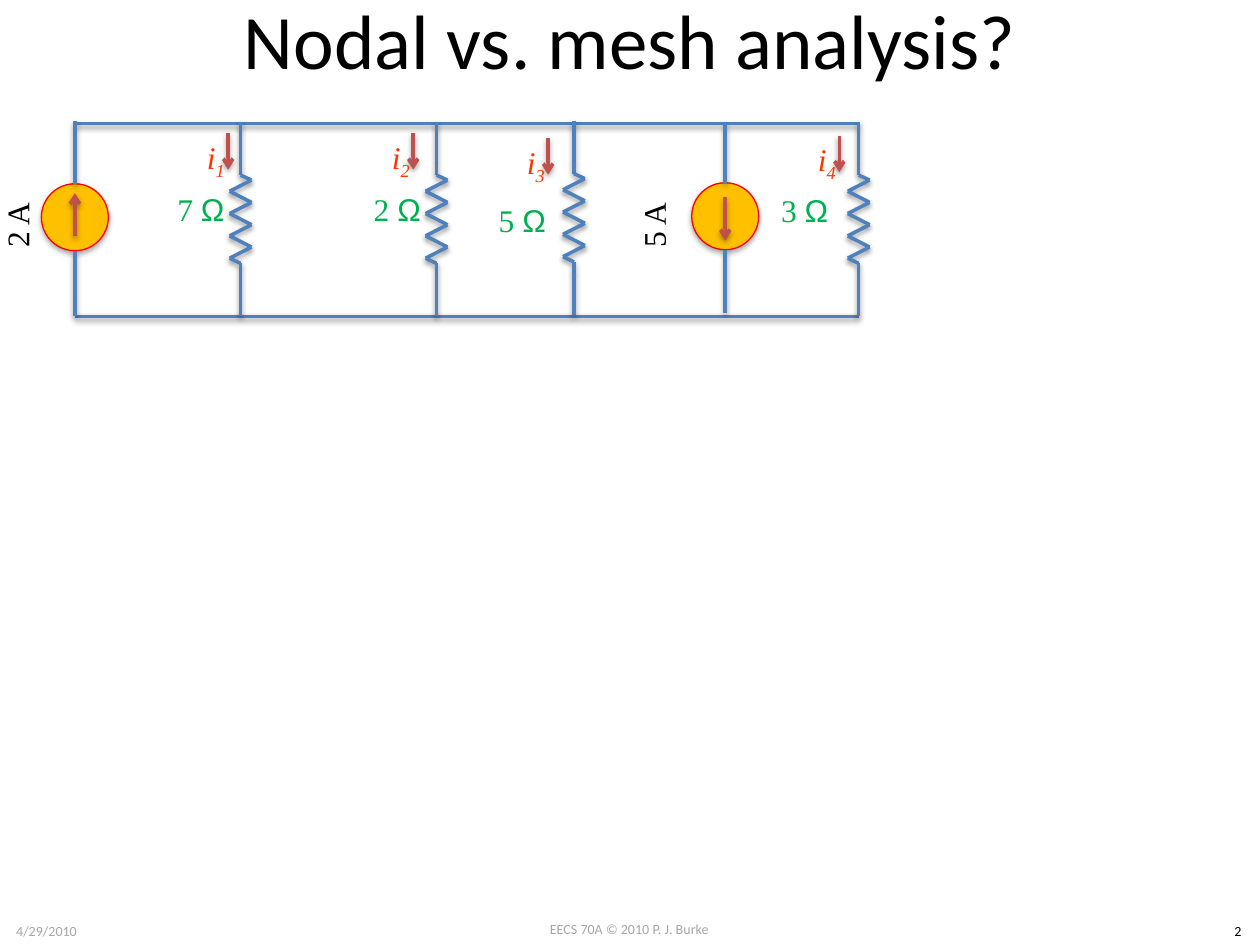
from lxml import etree
from pptx import Presentation
from pptx.dml.color import RGBColor
from pptx.enum.shapes import MSO_CONNECTOR, MSO_SHAPE
from pptx.enum.text import MSO_ANCHOR, PP_ALIGN
from pptx.oxml import parse_xml
from pptx.oxml.ns import nsdecls, qn
from pptx.util import Cm, Pt

STRAIGHT = MSO_CONNECTOR.STRAIGHT
ELLIPSE = MSO_SHAPE.OVAL
CENTER = PP_ALIGN.CENTER
MIDDLE, TOP = MSO_ANCHOR.MIDDLE, MSO_ANCHOR.TOP

COLORS = {
    "wire": "4F81BD",
    "arrow": "C0504D",
    "source": "FFC000",
    "source_edge": "FF0000",
    "resistance": "00B050",
    "current": "FF3300",
    "text": "000000",
    "footer": "A6A6A6",
}
SERIF, SANS, SYMBOL = "Times New Roman", "Calibri", "Arial"

# Lengths in centimetres
TOP_RAIL, BOTTOM_RAIL = 2.49, 6.38
LEFT_END, RIGHT_END = 1.52, 17.31
ZIGZAG_WIDTH, ZIGZAG_STEP, ZIGZAG_CORNERS = 0.44, 0.225, 8
SOURCE_SIZE = 1.35

# Centre x, top y, value, label corner, start of the current arrow
RESISTORS = [
    (4.85, 2.46, "7 ", (2.54, 3.28), (4.60, 2.69)),
    (8.80, 2.46, "2 ", (6.50, 3.28), (8.33, 2.69)),
    (11.57, 2.43, "5 ", (9.02, 3.51), (11.05, 2.79)),
    (17.31, 2.46, "3 ", (14.71, 3.30), (16.92, 2.74)),
]
# Centre, lead ends, direction (1 is down), value, label corner
SOURCES = [
    ((1.51, 4.38), (2.44, 6.38), -1, "2 A", (-1.17, 3.61)),
    ((14.62, 4.36), (2.49, 6.30), 1, "5 A", (11.66, 3.61)),
]


def color(name):
    return RGBColor.from_string(COLORS[name])


def add_shadow(shape, distance, alpha):
    shape._element.spPr.append(parse_xml(
        f'<a:effectLst {nsdecls("a")}>'
        f'<a:outerShdw blurRad="40000" dist="{distance}" dir="5400000" rotWithShape="0">'
        f'<a:srgbClr val="000000"><a:alpha val="{alpha}"/></a:srgbClr>'
        '</a:outerShdw></a:effectLst>'))


def add_line(page, start, end, name="wire", arrow=False):
    line = page.shapes.add_connector(STRAIGHT, *map(Cm, start + end))
    line.line.color.rgb = color(name)
    line.line.width = Pt(2)
    if arrow:
        outline = line.line._get_or_add_ln()
        etree.SubElement(outline, qn("a:tailEnd"), type="arrow")
    add_shadow(line, 20000, 38000)


def add_text(page, corner, size, texts, points, name, font=SERIF, anchor=MIDDLE,
             rotation=0, italic=False):
    box = page.shapes.add_textbox(*map(Cm, corner + size))
    box.rotation = rotation
    frame = box.text_frame
    frame.word_wrap = True
    frame.vertical_anchor = anchor
    para = frame.paragraphs[0]
    para.alignment = CENTER
    para.font.size = Pt(points)
    para.font.name = font
    para.font.italic = italic
    para.font.color.rgb = color(name)
    spans = []
    for text in texts:
        span = para.add_run()
        span.text = text
        spans.append(span)
    return spans


def add_resistor(page, x, top, value, label_corner):
    # Lead, zigzag and lead, drawn from top to bottom
    points = [(x, top), (x, top + 0.84), (x, top + 1.07)]
    for corner in range(ZIGZAG_CORNERS):
        side = -1 if corner % 2 else 1
        points.append((x + side * ZIGZAG_WIDTH / 2, top + 1.17 + corner * ZIGZAG_STEP))
    points += [(x, top + 2.85), (x, top + 3.08), (x, top + 3.92)]
    for start, end in zip(points, points[1:]):
        add_line(page, start, end)

    number, unit = add_text(page, label_corner, (3.02, 1.85), [value, "Ω"], 18, "resistance")
    number.font.name = SERIF
    unit.font.name = SYMBOL


def add_current(page, index, start):
    x, y = start
    add_line(page, start, (x, y + 0.73), "arrow", arrow=True)
    letter, subscript = add_text(page, (x - 1.23, y - 0.25), (1.96, 1.55),
                                 ["i", str(index)], 18, "current", italic=True)
    subscript.font._element.set("baseline", "-25000")


def add_source(page, center, lead_ends, direction, value, label_corner):
    x, y = center
    radius = SOURCE_SIZE / 2
    circle = page.shapes.add_shape(ELLIPSE, Cm(x - radius), Cm(y - radius),
                                   Cm(SOURCE_SIZE), Cm(SOURCE_SIZE))
    circle.fill.solid()
    circle.fill.fore_color.rgb = color("source")
    circle.line.color.rgb = color("source_edge")
    circle.line.width = Pt(0.75)
    add_shadow(circle, 23000, 35000)

    add_line(page, (x, y - 0.38 * direction), (x, y + 0.49 * direction), "arrow", arrow=True)
    add_line(page, (x, y - radius), (x, lead_ends[0]))
    add_line(page, (x, y + radius), (x, lead_ends[1]))
    add_text(page, label_corner, (3.02, 1.85), [value], 18, "text", rotation=270)


def main():
    deck = Presentation()
    deck.slide_width, deck.slide_height = Cm(25.4), Cm(19.05)
    page = deck.slides.add_slide(deck.slide_layouts[6])

    # Footer and title
    footers = [
        ((9.73, 18.44), 5.92, "EECS 70A © 2010 P. J. Burke", "footer"),
        ((0, 18.47), 1.88, "4/29/2010", "footer"),
        ((24.51, 18.47), 0.89, "2", "text"),
    ]
    for corner, width, text, name in footers:
        add_text(page, corner, (width, 0.61), [text], 8, name, SANS, TOP)
    add_text(page, (1.27, -0.43), (22.86, 2.41), ["Nodal vs. mesh analysis?"], 44, "text", SANS)

    # Rails
    for rail in (TOP_RAIL, BOTTOM_RAIL):
        add_line(page, (LEFT_END, rail), (RIGHT_END, rail))

    # Branches
    for source in SOURCES:
        add_source(page, *source)
    for index, (x, top, value, label_corner, arrow_start) in enumerate(RESISTORS, 1):
        add_resistor(page, x, top, value, label_corner)
        add_current(page, index, arrow_start)

    deck.save("out.pptx")


if __name__ == "__main__":
    main()
